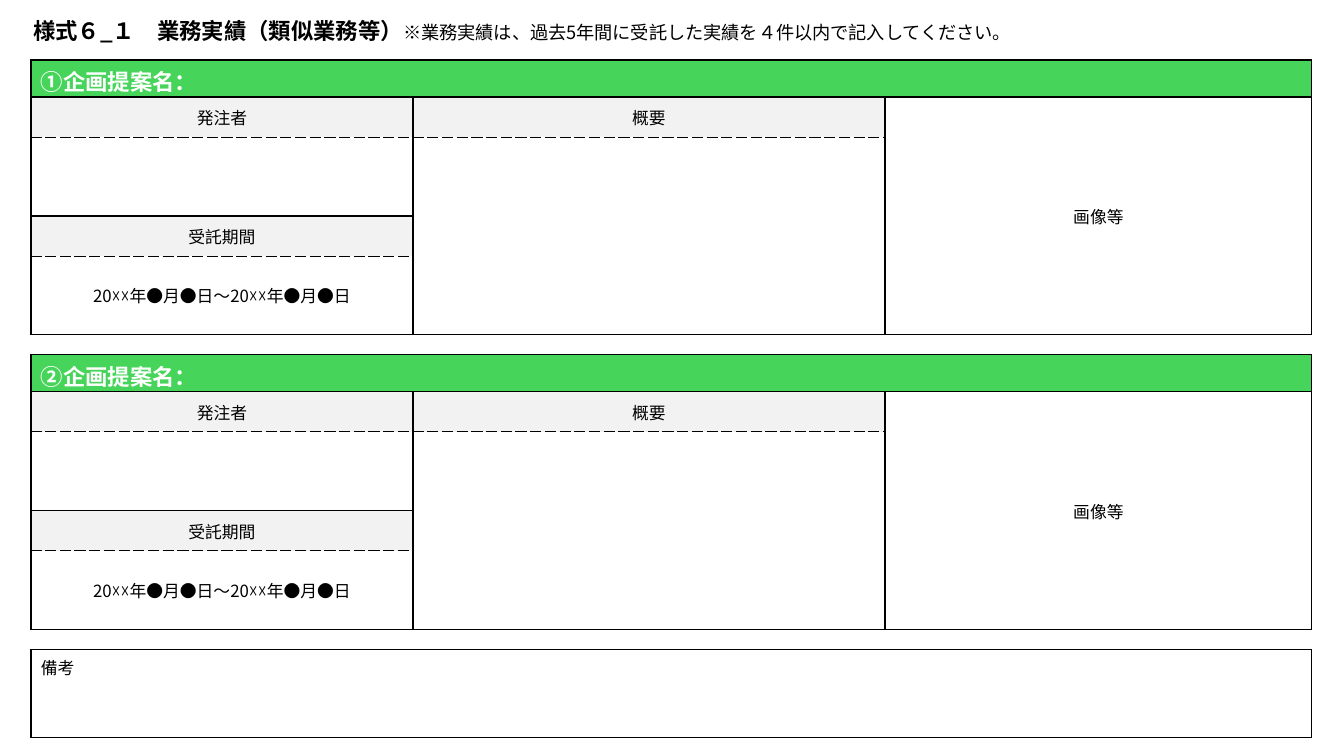
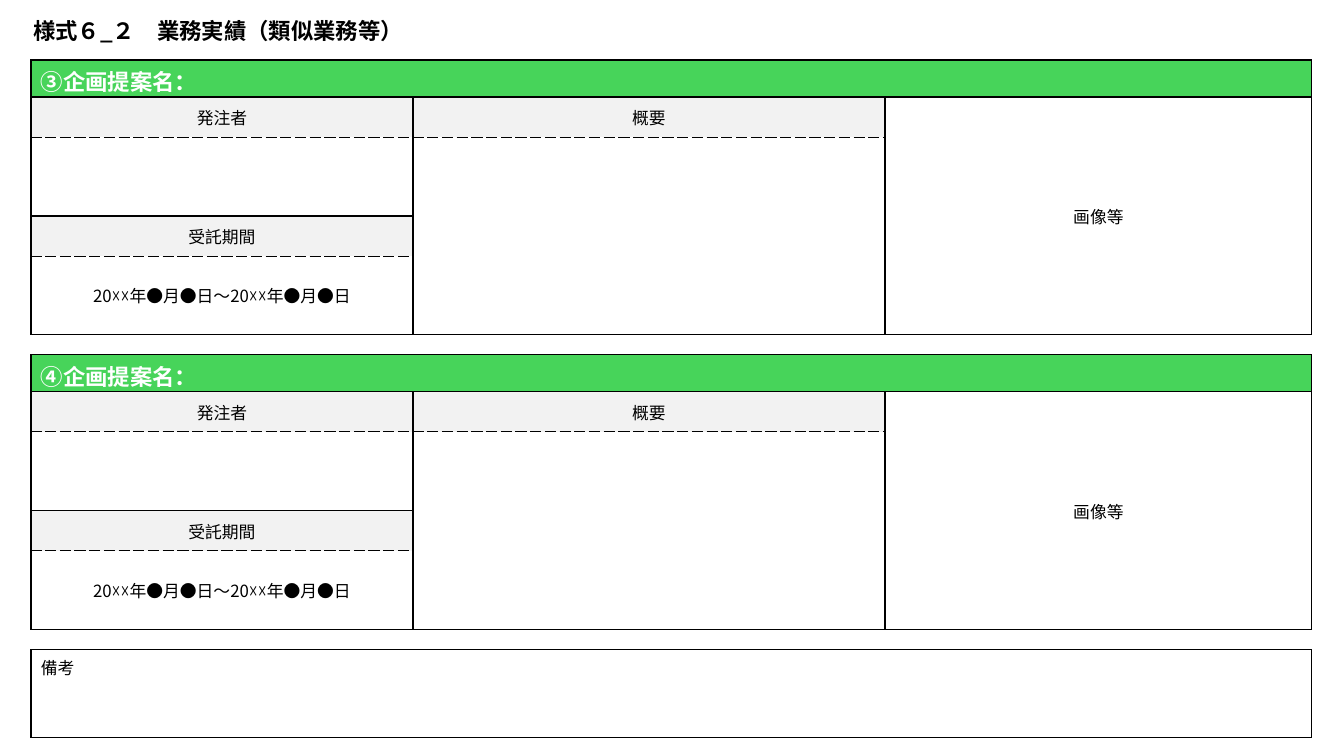
from dataclasses import dataclass
from typing import NamedTuple, Optional

from lxml import etree
from pptx import Presentation
from pptx.dml.color import RGBColor
from pptx.enum.text import MSO_ANCHOR, PP_ALIGN
from pptx.oxml.ns import qn
from pptx.util import Pt

PX = 914400 / 100.8
FONT = "Noto Sans CJK JP"
NO_STYLE_GRID = "{2D5ABB26-0587-4C30-8999-92F81FD0307C}"

BLACK = RGBColor(0x00, 0x00, 0x00)
WHITE = RGBColor(0xFF, 0xFF, 0xFF)
GREEN = RGBColor(0x47, 0xD4, 0x5A)
GREY = RGBColor(0xF2, 0xF2, 0xF2)

LEFT, CENTER = PP_ALIGN.LEFT, PP_ALIGN.CENTER
TOP, MIDDLE = MSO_ANCHOR.TOP, MSO_ANCHOR.MIDDLE

TABLE_LEFT, TABLE_TOP = 31, 60
COLUMN_WIDTHS = (382, 472, 427)
BLOCK_HEIGHTS = (37, 40, 79, 40, 79, 20)
REMARKS_HEIGHT = 88
ROW_HEIGHTS = BLOCK_HEIGHTS * 2 + (REMARKS_HEIGHT,)


class Border(NamedTuple):
    points: float
    dash: str


SOLID = Border(1, "solid")
DASHED = Border(0.5, "dash")


class Borders(NamedTuple):
    left: Optional[Border] = SOLID
    right: Optional[Border] = SOLID
    top: Optional[Border] = SOLID
    bottom: Optional[Border] = SOLID


@dataclass(frozen=True)
class CellStyle:
    fill: Optional[RGBColor] = None
    color: RGBColor = BLACK
    size: int = 12
    bold: bool = False
    align: PP_ALIGN = CENTER
    anchor: MSO_ANCHOR = MIDDLE
    margin_top: int = 5
    margin_bottom: int = 5
    borders: Borders = Borders()


BAND = CellStyle(GREEN, WHITE, 16, True, LEFT, margin_top=4, margin_bottom=0)
HEADING = CellStyle(GREY, borders=Borders(bottom=DASHED))
ENTRY = CellStyle(borders=Borders(top=DASHED))
IMAGE = CellStyle()
GAP = CellStyle(size=1, margin_top=0, margin_bottom=0, borders=Borders(left=None, right=None))
REMARKS = CellStyle(align=LEFT, anchor=TOP)


class CellSpec(NamedTuple):
    row: int
    column: int
    style: CellStyle
    text: str = ""
    row_span: int = 1
    column_span: int = 1


BLOCK_CELLS = (
    CellSpec(1, 0, HEADING, "発注者"),
    CellSpec(1, 1, HEADING, "概要"),
    CellSpec(1, 2, IMAGE, "画像等", row_span=4),
    CellSpec(2, 0, ENTRY),
    CellSpec(2, 1, ENTRY, row_span=3),
    CellSpec(3, 0, HEADING, "受託期間"),
    CellSpec(4, 0, ENTRY, "20☓☓年●月●日～20☓☓年●月●日"),
    *(CellSpec(5, column, GAP) for column in range(3)),
)


class FormPage(NamedTuple):
    title: str
    note: str
    title_width: int
    numerals: str


PAGES = (
    FormPage("様式６_１　業務実績（類似業務等）",
             "※業務実績は、過去5年間に受託した実績を４件以内で記入してください。", 1007, "①②"),
    FormPage("様式６_２　業務実績（類似業務等）", "", 942, "③④"),
)


def px(length: int) -> int:
    return round(length * PX)


def format_run(run, size: int, color: RGBColor, bold: bool) -> None:
    run.font.size = Pt(size)
    run.font.bold = bold
    run.font.color.rgb = color
    run.font.name = FONT
    etree.SubElement(run._r.get_or_add_rPr(), qn("a:ea")).set("typeface", FONT)


def set_borders(cell, borders: Borders) -> None:
    properties = cell._tc.get_or_add_tcPr()
    for index, (side, border) in enumerate(zip("LRTB", borders)):
        line = etree.Element(qn(f"a:ln{side}"))
        properties.insert(index, line)
        if border is None:
            line.set("w", "0")
            etree.SubElement(line, qn("a:noFill"))
            continue
        line.set("w", str(Pt(border.points)))
        fill = etree.SubElement(line, qn("a:solidFill"))
        etree.SubElement(fill, qn("a:srgbClr")).set("val", str(BLACK))
        etree.SubElement(line, qn("a:prstDash")).set("val", border.dash)


def style_cell(cell, style: CellStyle) -> None:
    if style.fill is None:
        cell.fill.background()
    else:
        cell.fill.solid()
        cell.fill.fore_color.rgb = style.fill
    cell.vertical_anchor = style.anchor
    cell.margin_left = cell.margin_right = px(10)
    cell.margin_top, cell.margin_bottom = px(style.margin_top), px(style.margin_bottom)
    set_borders(cell, style.borders)
    paragraph = cell.text_frame.paragraphs[0]
    paragraph.alignment = style.align
    for run in paragraph.runs:
        format_run(run, style.size, style.color, style.bold)
    if not paragraph.runs:
        end = etree.SubElement(paragraph._p, qn("a:endParaRPr"))
        end.set("sz", str(style.size * 100))


def draw_cell(table, spec: CellSpec, first_row: int = 0) -> None:
    """Fill one cell or merged area, counting rows from first_row."""
    row = first_row + spec.row
    origin = table.cell(row, spec.column)
    if spec.row_span > 1 or spec.column_span > 1:
        origin.merge(table.cell(row + spec.row_span - 1, spec.column + spec.column_span - 1))
    origin.text_frame.text = spec.text
    for row_offset in range(spec.row_span):
        for column_offset in range(spec.column_span):
            style_cell(table.cell(row + row_offset, spec.column + column_offset), spec.style)


def add_title(slide, page: FormPage) -> None:
    box = slide.shapes.add_textbox(px(23), px(12), px(page.title_width), px(37))
    frame = box.text_frame
    frame.word_wrap = True
    frame.vertical_anchor = MIDDLE
    frame.margin_left = frame.margin_right = px(10)
    frame.margin_top = frame.margin_bottom = px(2)
    paragraph = frame.paragraphs[0]
    paragraph.text = page.title
    format_run(paragraph.runs[0], 16, BLACK, True)
    if page.note:
        note = paragraph.add_run()
        note.text = page.note
        format_run(note, 13, BLACK, False)


def add_form(slide, numerals: str) -> None:
    frame = slide.shapes.add_table(
        len(ROW_HEIGHTS), len(COLUMN_WIDTHS), px(TABLE_LEFT), px(TABLE_TOP),
        px(sum(COLUMN_WIDTHS)), px(sum(ROW_HEIGHTS)))
    table = frame.table
    table.first_row = table.horz_banding = False
    table._tbl.tblPr.find(qn("a:tableStyleId")).text = NO_STYLE_GRID
    for column, width in zip(table.columns, COLUMN_WIDTHS):
        column.width = px(width)
    for row, height in zip(table.rows, ROW_HEIGHTS):
        row.height = px(height)
    for block, numeral in enumerate(numerals):
        band = CellSpec(0, 0, BAND, f"{numeral}企画提案名：", column_span=3)
        for spec in (band, *BLOCK_CELLS):
            draw_cell(table, spec, block * len(BLOCK_HEIGHTS))
    draw_cell(table, CellSpec(len(ROW_HEIGHTS) - 1, 0, REMARKS, "備考", column_span=3))


def main() -> None:
    presentation = Presentation()
    presentation.slide_width, presentation.slide_height = px(1344), px(756)
    for page in PAGES:
        slide = presentation.slides.add_slide(presentation.slide_layouts[6])
        add_title(slide, page)
        add_form(slide, page.numerals)
    presentation.save("out.pptx")


if __name__ == "__main__":
    main()
